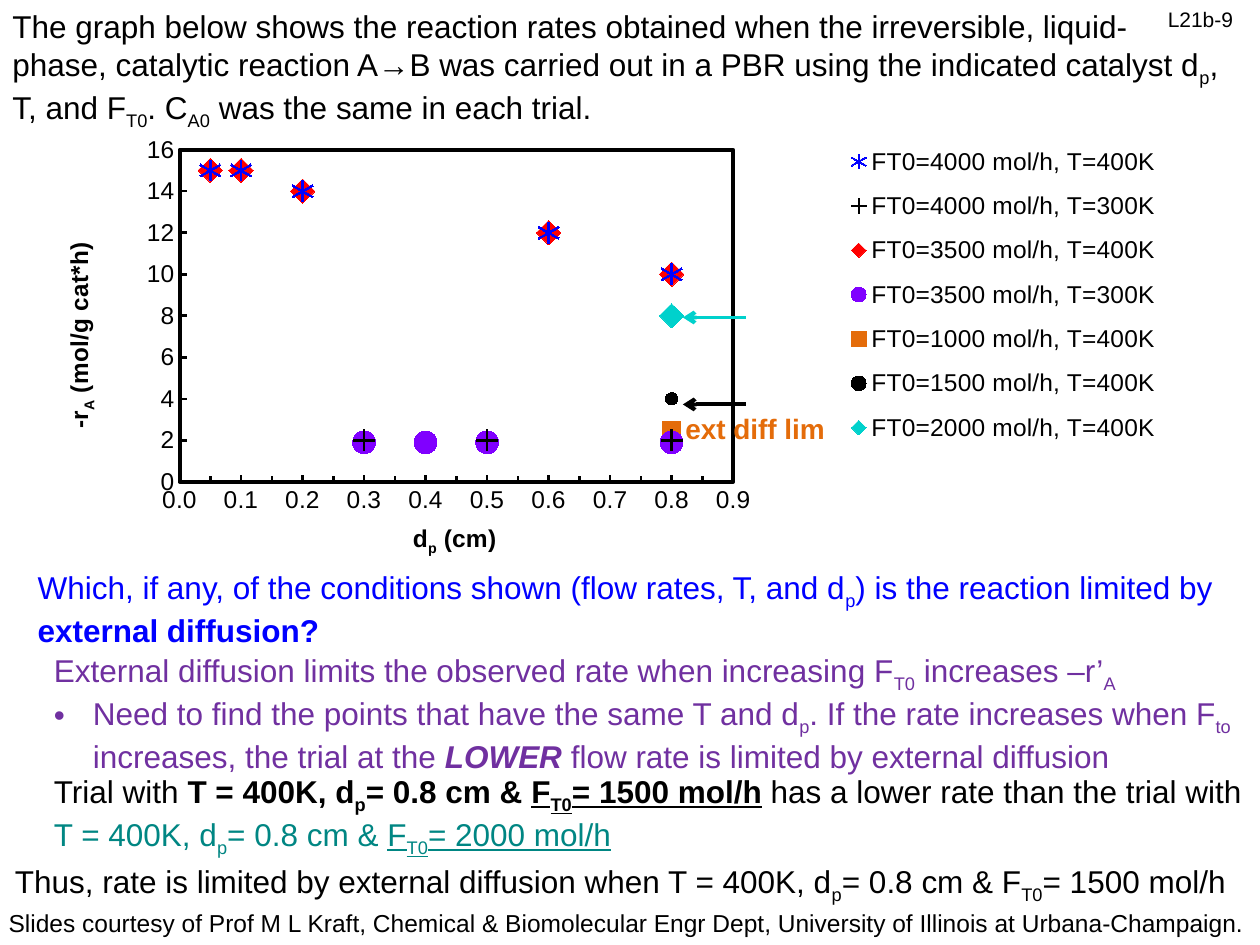
from lxml import etree
from pptx import Presentation
from pptx.chart.data import XyChartData
from pptx.dml.color import RGBColor
from pptx.enum.chart import (XL_CHART_TYPE, XL_LEGEND_POSITION,
                             XL_MARKER_STYLE, XL_TICK_MARK)
from pptx.enum.shapes import MSO_CONNECTOR
from pptx.enum.text import MSO_AUTO_SIZE
from pptx.oxml import parse_xml
from pptx.oxml.ns import nsdecls, qn
from pptx.util import Inches, Pt

SCATTER = XL_CHART_TYPE.XY_SCATTER
RIGHT = XL_LEGEND_POSITION.RIGHT
STAR, PLUS = XL_MARKER_STYLE.STAR, XL_MARKER_STYLE.PLUS
DIAMOND, CIRCLE = XL_MARKER_STYLE.DIAMOND, XL_MARKER_STYLE.CIRCLE
SQUARE = XL_MARKER_STYLE.SQUARE
INSIDE, NO_TICK = XL_TICK_MARK.INSIDE, XL_TICK_MARK.NONE
STRAIGHT = MSO_CONNECTOR.STRAIGHT
GROW = MSO_AUTO_SIZE.SHAPE_TO_FIT_TEXT

BLACK = RGBColor(0, 0, 0)
BLUE = RGBColor(0, 0, 0xFF)
RED = RGBColor(0xFF, 0, 0)
VIOLET = RGBColor(0x80, 0, 0xFF)
PURPLE = RGBColor(0x70, 0x30, 0xA0)
ORANGE = RGBColor(0xE4, 0x6C, 0x0A)
CYAN = RGBColor(0, 0xD1, 0xCC)
TEAL = RGBColor(0, 0x86, 0x83)

FONT = "Arial"
BOLD = {"bold": True}
UNDER = {"underline": True}

SIZES = [0.05, 0.1, 0.2, 0.6, 0.8]
RATES = [15, 15, 14, 12, 10]
# flow, temperature, x values, y values, marker, marker size, colour
TRIALS = [
    (4000, 400, SIZES, RATES, STAR, 12, BLUE),
    (4000, 300, [0.3, 0.5, 0.8], [2] * 3, PLUS, 12, BLACK),
    (3500, 400, SIZES, RATES, DIAMOND, 14, RED),
    (3500, 300, [0.3, 0.4, 0.5, 0.8], [1.9] * 4, CIRCLE, 13, VIOLET),
    (1000, 400, [0.8], [2.5], SQUARE, 10, ORANGE),
    (1500, 400, [0.8], [4], CIRCLE, 7, BLACK),
    (2000, 400, [0.8], [8], DIAMOND, 14, CYAN),
]


def style(font, size, color, extra):
    values = {"name": FONT, "size": Pt(size), **extra}
    for key, value in values.items():
        setattr(font, key, value)
    font.color.rgb = color


def write(para, runs, size, color):
    """Add (text, format) runs; every second part between bars is a subscript."""
    for text, form in runs:
        extra = dict(form)
        tint = extra.pop("color", color)
        for i, part in enumerate(text.split("|")):
            if part:
                run = para.add_run()
                run.text = part
                style(run.font, size, tint, extra)
                if i % 2:
                    run.font._element.set("baseline", "-25000")


def add_text(slide, box, paras, size=18, color=BLACK, wrap=True):
    frame = slide.shapes.add_textbox(*map(Inches, box)).text_frame
    frame.word_wrap = wrap
    frame.auto_size = GROW
    for i, runs in enumerate(paras):
        para = frame.add_paragraph() if i else frame.paragraphs[0]
        write(para, runs, size, color)
    return frame


def add_bullet(para, indent):
    props = para._p.get_or_add_pPr()
    props.set("marL", str(Inches(indent)))
    props.set("indent", str(-Inches(indent)))
    etree.SubElement(props, qn("a:buFont"), typeface=FONT)
    etree.SubElement(props, qn("a:buChar"), char="•")


def add_arrow(slide, y, color):
    line = slide.shapes.add_connector(
        STRAIGHT, Inches(5.92), Inches(y), Inches(5.42), Inches(y))
    line.line.color.rgb = color
    line.line.width = Pt(2.25)
    etree.SubElement(line.line._get_or_add_ln(), qn("a:tailEnd"), type="arrow")
    etree.SubElement(line._element.spPr, qn("a:effectLst"))


def place(node, index, target=None, **spots):
    """Give a chart part a manual layout, in fractions of the chart."""
    old = node.find(qn("c:layout"))
    if old is not None:
        node.remove(old)
    layout = etree.Element(qn("c:layout"))
    manual = etree.SubElement(layout, qn("c:manualLayout"))
    if target:
        etree.SubElement(manual, qn("c:layoutTarget"), val=target)
    for mode in ("xMode", "yMode"):
        etree.SubElement(manual, qn("c:" + mode), val="edge")
    for key, value in spots.items():
        etree.SubElement(manual, qn("c:" + key), val=str(value))
    node.insert(index, layout)


def set_axis(axis, top, step, title, x, y):
    values = {"minimum_scale": 0, "maximum_scale": top, "major_unit": step,
              "has_major_gridlines": False, "major_tick_mark": INSIDE,
              "minor_tick_mark": NO_TICK}
    for key, value in values.items():
        setattr(axis, key, value)
    axis.format.line.color.rgb = BLACK
    axis.format.line.width = Pt(1.5)
    head = axis.axis_title
    write(head.text_frame.paragraphs[0], [(title, BOLD)], 14, BLACK)
    place(head._element, 1, x=x, y=y)


def add_graph(slide):
    data = XyChartData()
    for flow, temp, xs, ys, *_ in TRIALS:
        trial = data.add_series(f"FT0={flow} mol/h, T={temp}K")
        for x, y in zip(xs, ys):
            trial.add_data_point(x, y)
    box = map(Inches, (0.38, 0.97, 9.25, 3.5))
    chart = slide.shapes.add_chart(SCATTER, *box, data).chart
    chart.has_title = False
    style(chart.font, 14, BLACK, {})
    plot = chart.plots[0]
    plot.vary_by_categories = False

    for series, (*_, shape, size, color) in zip(plot.series, TRIALS):
        series.format.line.fill.background()
        mark = series.marker
        mark.style, mark.size = shape, size
        mark.format.fill.solid()
        mark.format.fill.fore_color.rgb = color
        mark.format.line.color.rgb = color

    across, up = chart.category_axis, chart.value_axis
    set_axis(across, 0.9, 0.1, "d|p| (cm)", 0.31, 0.91)
    across.minor_unit = 0.05
    across.minor_tick_mark = INSIDE
    across.tick_labels.number_format = "#,##0.0"
    across.tick_labels.number_format_is_linked = False
    set_axis(up, 16, 2, "-r|A| (mol/g cat*h)", 0.01, 0.27)
    up.axis_title.text_frame._txBody.bodyPr.set("rot", "-5400000")

    chart.has_legend = True
    chart.legend.position = RIGHT
    chart.legend.include_in_layout = False
    place(chart.legend._element, 1, x=0.67, y=0.02, w=0.3, h=0.75)

    area = chart._chartSpace.chart.plotArea
    place(area, 0, "inner", x=0.113, y=0.063, w=0.475, h=0.761)
    area.append(parse_xml(
        f'<c:spPr {nsdecls("c", "a")}><a:noFill/><a:ln w="{Pt(2.25)}">'
        f'<a:solidFill><a:srgbClr val="{BLACK}"/></a:solidFill></a:ln></c:spPr>'))


def main():
    deck = Presentation()
    deck.slide_width, deck.slide_height = Inches(10), Inches(7.5)
    slide = deck.slides.add_slide(deck.slide_layouts[6])

    add_text(slide, (-0.03, 7.16, 10.06, 0.34), [[(
        "Slides courtesy of Prof M L Kraft, Chemical & Biomolecular Engr Dept, "
        "University of Illinois at Urbana-Champaign.", {})]], 14, wrap=False)
    add_text(slide, (9.17, 0, 0.83, 0.3), [[("L21b-9", {})]], 12, wrap=False)
    add_text(slide, (0, 0.01, 10, 1.01), [
        [("The graph below shows the reaction rates obtained when the "
          "irreversible, liquid-", {})],
        [("phase, catalytic reaction A→B was carried out in a PBR using the "
          "indicated catalyst d|p|, T, and F|T0|. C|A0| was the same in each "
          "trial.", {})]])
    add_graph(slide)
    add_text(slide, (0.2, 4.46, 9.6, 0.71), [[
        ("Which, if any, of the conditions shown (flow rates, T, and d|p|) is "
         "the reaction limited by ", {}),
        ("external diffusion?", BOLD)]], color=BLUE)
    notes = add_text(slide, (0.33, 5.12, 9.6, 1.01), [
        [("External diffusion limits the observed rate when increasing F|T0| "
          "increases –r’|A|", {})],
        [("Need to find the points that have the same T and d|p|. If the rate "
          "increases when F|to| increases, the trial at the ", {}),
         ("LOWER", {**BOLD, "italic": True}),
         (" flow rate is limited by external diffusion", {})]], color=PURPLE)
    add_bullet(notes.paragraphs[1], 0.31)
    add_arrow(slide, 3.21, BLACK)
    add_text(slide, (0.33, 6.08, 9.67, 0.71), [[
        ("Trial with ", {}),
        ("T = 400K, d|p|= 0.8 cm & ", BOLD),
        ("F|T0|= 1500 mol/h", {**BOLD, **UNDER}),
        (" has a lower rate than the trial with ", {}),
        ("T = 400K, d|p|= 0.8 cm & ", {"color": TEAL}),
        ("F|T0|= 2000 mol/h", {"color": TEAL, **UNDER})]])
    add_arrow(slide, 2.52, CYAN)
    add_text(slide, (5.34, 3.22, 1.35, 0.37), [[("ext diff lim", BOLD)]],
             16, ORANGE, wrap=False)
    add_text(slide, (0.02, 6.79, 9.94, 0.4), [[(
        "Thus, rate is limited by external diffusion when T = 400K, "
        "d|p|= 0.8 cm & F|T0|= 1500 mol/h", {})]], wrap=False)

    deck.save("out.pptx")


if __name__ == "__main__":
    main()
